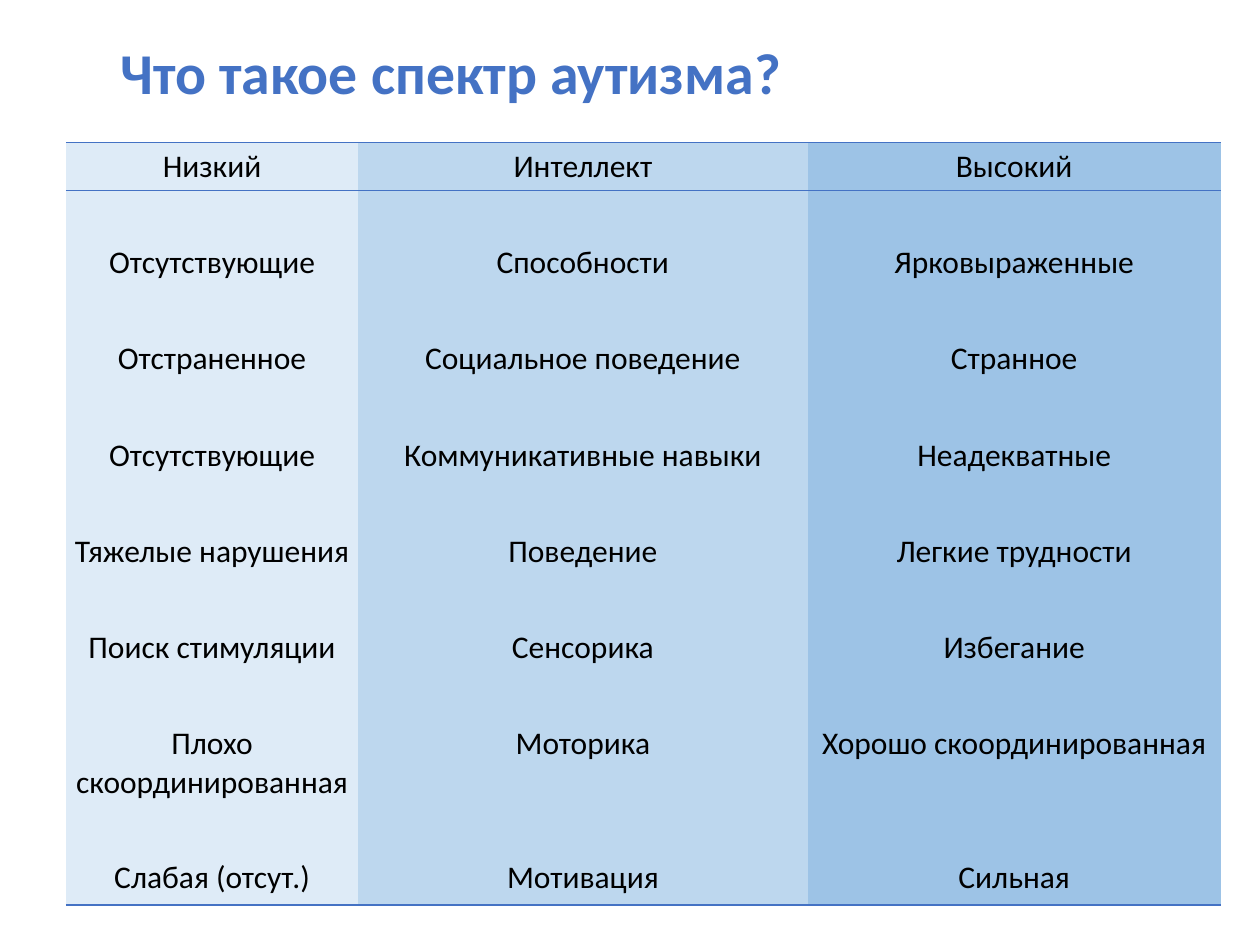
import pptx
import pptx.dml.color
import pptx.enum.text
import pptx.oxml
import pptx.oxml.ns
import pptx.util
from pptx.util import Cm

BLUE = pptx.dml.color.RGBColor(0x44, 0x72, 0xC4)
BLACK = pptx.dml.color.RGBColor(0x00, 0x00, 0x00)
COLUMN_FILLS = [
    pptx.dml.color.RGBColor(0xDE, 0xEB, 0xF7),
    pptx.dml.color.RGBColor(0xBD, 0xD7, 0xEE),
    pptx.dml.color.RGBColor(0x9D, 0xC3, 0xE6),
]
COLUMN_WIDTHS = [Cm(5.89), Cm(9.06), Cm(8.33)]
ROW_HEIGHT = Cm(0.97)
TWO_LINE_HEIGHT = Cm(1.73)
LAST_ROW_HEIGHT = Cm(1.03)
PLAIN_TABLE_STYLE = "{2D5ABB26-0587-4C30-8999-92F81FD0307C}"

SPECTRUM = [
    ("Низкий", "Интеллект", "Высокий"),
    ("Отсутствующие", "Способности", "Ярковыраженные"),
    ("Отстраненное", "Социальное поведение", "Странное"),
    ("Отсутствующие", "Коммуникативные навыки", "Неадекватные"),
    ("Тяжелые нарушения", "Поведение", "Легкие трудности"),
    ("Поиск стимуляции", "Сенсорика", "Избегание"),
    ("Плохо скоординированная", "Моторика", "Хорошо скоординированная"),
    ("Слабая (отсут.)", "Мотивация", "Сильная"),
]


def write_text(text_frame, text, size=18, color=BLACK, bold=False,
               alignment=pptx.enum.text.PP_ALIGN.CENTER, line_spacing=None):
    paragraph = text_frame.paragraphs[0]
    paragraph.alignment = alignment
    paragraph.line_spacing = line_spacing
    run = paragraph.add_run()
    run.text = text
    run.font.name = "Calibri"
    run.font.size = pptx.util.Pt(size)
    run.font.bold = bold
    run.font.color.rgb = color


def add_title(slide, text):
    shape = slide.shapes.add_textbox(Cm(2.18), Cm(0.53), Cm(22.43), Cm(1.98))
    shape.text_frame.word_wrap = True
    shape.text_frame.vertical_anchor = pptx.enum.text.MSO_ANCHOR.MIDDLE
    write_text(shape.text_frame, text, size=33, color=BLUE, bold=True,
               alignment=pptx.enum.text.PP_ALIGN.LEFT, line_spacing=0.9)


def add_border(cell, side):
    """Draw a blue line on the "T" (top) or "B" (bottom) side; add "B" first."""
    line = pptx.oxml.parse_xml(
        f'<a:ln{side} {pptx.oxml.ns.nsdecls("a")} w="{pptx.util.Pt(1)}">'
        f'<a:solidFill><a:srgbClr val="{BLUE}"/></a:solidFill></a:ln{side}>')
    cell._tc.get_or_add_tcPr().insert(0, line)


def format_cell(cell, fill):
    cell.margin_left = cell.margin_right = Cm(0.15)
    cell.margin_top = cell.margin_bottom = Cm(0.1)
    cell.fill.solid()
    cell.fill.fore_color.rgb = fill


def add_spectrum_table(slide):
    """Place the entries on every other row, with empty rows between them."""
    row_count = 2 * len(SPECTRUM) - 1
    heights = [ROW_HEIGHT] * row_count
    heights[-3] = TWO_LINE_HEIGHT
    heights[-1] = LAST_ROW_HEIGHT
    frame = slide.shapes.add_table(row_count, len(COLUMN_WIDTHS), Cm(1.33), Cm(2.87),
                                   sum(COLUMN_WIDTHS), sum(heights))
    for style in frame.element.iter(pptx.oxml.ns.qn("a:tableStyleId")):
        style.text = PLAIN_TABLE_STYLE
    table = frame.table
    table.first_row = table.horz_banding = False
    for column, width in zip(table.columns, COLUMN_WIDTHS):
        column.width = width
    for row_index, (row, height) in enumerate(zip(table.rows, heights)):
        row.height = height
        for column_index, cell in enumerate(row.cells):
            format_cell(cell, COLUMN_FILLS[column_index])
            if row_index % 2 == 0:
                write_text(cell.text_frame, SPECTRUM[row_index // 2][column_index])
            if row_index in (0, row_count - 1):
                add_border(cell, "B")
            if row_index == 0:
                add_border(cell, "T")


def main():
    presentation = pptx.Presentation()
    presentation.slide_width = Cm(25.4)
    presentation.slide_height = Cm(19.05)
    slide = presentation.slides.add_slide(presentation.slide_layouts[6])
    add_title(slide, "Что такое спектр аутизма?")
    add_spectrum_table(slide)
    presentation.save("out.pptx")


if __name__ == "__main__":
    main()
